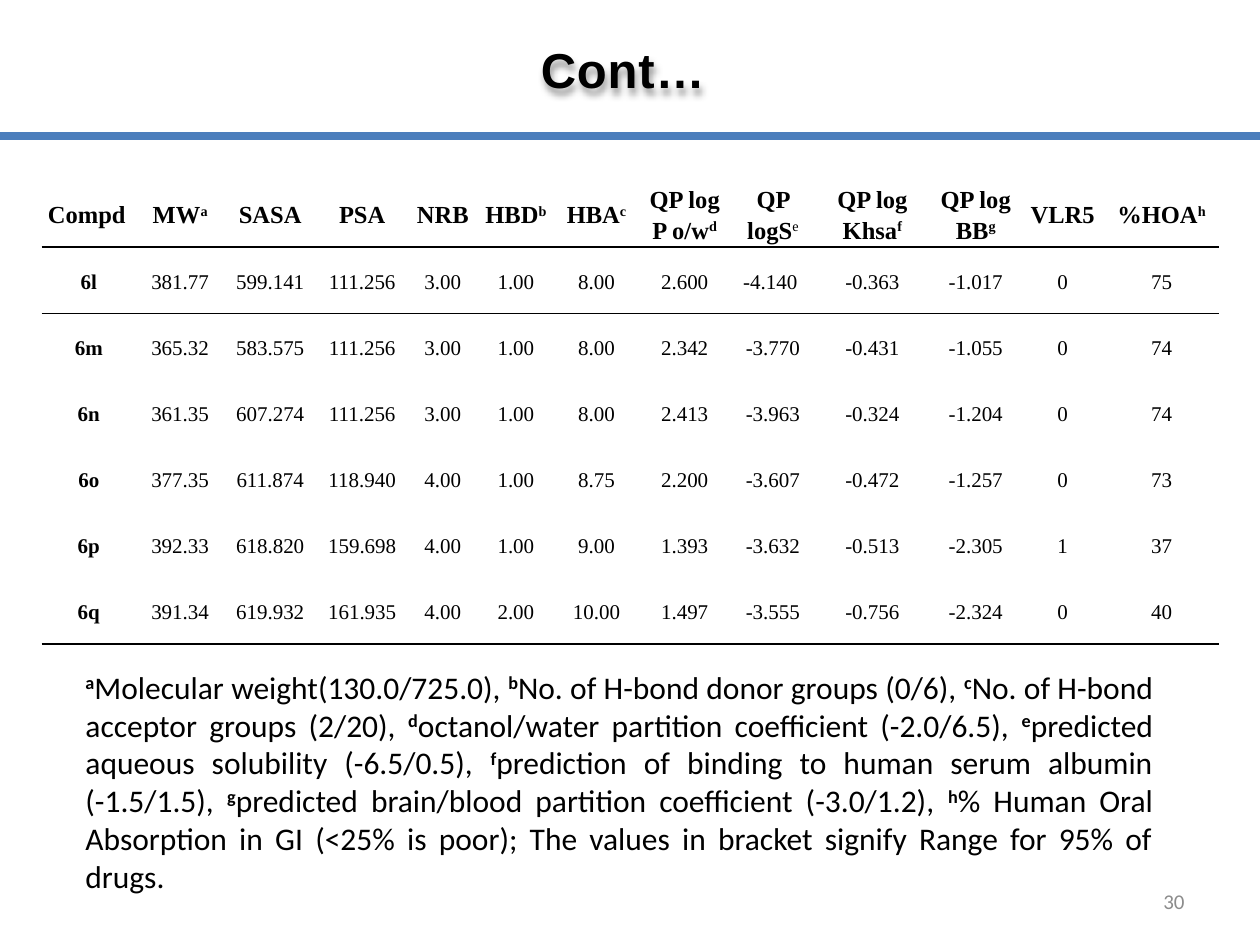
"""Build the slide with the table of predicted properties for compounds 6l to 6q."""
from lxml.etree import SubElement
from pptx import Presentation
from pptx.dml.color import RGBColor
from pptx.enum.shapes import MSO_CONNECTOR
from pptx.enum.text import MSO_ANCHOR, MSO_AUTO_SIZE, PP_ALIGN
from pptx.oxml import parse_xml
from pptx.oxml.ns import nsdecls, qn
from pptx.util import Inches, Pt

BLACK = RGBColor(0, 0, 0)
THEME = {
    "rule": RGBColor(0x4B, 0x7E, 0xBC),
    "title": {"name": "Arial", "size": Pt(28), "bold": True, "color": BLACK},
    "head": {"name": "Times New Roman", "size": Pt(14), "bold": True, "color": BLACK},
    "cell": {"name": "Times New Roman", "size": Pt(12), "bold": False, "color": BLACK},
    "note": {"name": "Calibri", "size": Pt(18), "bold": False, "color": BLACK},
    "number": {"name": "Calibri", "size": Pt(12), "bold": False,
               "color": RGBColor(0x8C, 0x8C, 0x8C)},
}
NO_STYLE = "{2D5ABB26-0587-4C30-8999-92F81FD0307C}"


def add_run(p, text, style, raised=False, **changes):
    r = p.add_run()
    r.text = text
    for key, value in {**THEME[style], **changes}.items():
        if key == "color":
            r.font.color.rgb = value
        else:
            setattr(r.font, key, value)
    if raised:
        r._r.get_or_add_rPr().set("baseline", "30000")
    return r


def add_border(cell, side):
    ln = SubElement(cell._tc.get_or_add_tcPr(), qn(f"a:{side}"), w=str(Pt(1)))
    fill = SubElement(ln, qn("a:solidFill"))
    SubElement(fill, qn("a:srgbClr"), val=str(BLACK))


prs = Presentation()
prs.slide_width, prs.slide_height = Inches(10), Inches(7.5)
W, H = prs.slide_width, prs.slide_height
s = prs.slides.add_slide(prs.slide_layouts[5])

rule_y = int(H * 0.144)
rule = s.shapes.add_connector(MSO_CONNECTOR.STRAIGHT, 0, rule_y, W, rule_y)
rule.line.color.rgb = THEME["rule"]
rule.line.width = Pt(4.5)
SubElement(rule._element.spPr, qn("a:effectLst"))

title = s.shapes.title
title.left, title.top, title.width, title.height = 0, int(H * 0.035), W, int(H * 0.076)
tf = title.text_frame
tf.auto_size = MSO_AUTO_SIZE.SHAPE_TO_FIT_TEXT
tf.vertical_anchor = MSO_ANCHOR.TOP
p = tf.paragraphs[0]
p.alignment = PP_ALIGN.CENTER
r = add_run(p, "Cont… ", "title")
rPr = r._r.get_or_add_rPr()
rPr.set("spc", "50")
rPr.insert(0, parse_xml(
    f'<a:ln {nsdecls("a")} w="13500"><a:solidFill><a:srgbClr val="101A26">'
    '<a:alpha val="6000"/></a:srgbClr></a:solidFill></a:ln>'))
title._element.spPr.append(parse_xml(
    f'<a:effectLst {nsdecls("a")}><a:outerShdw blurRad="50800" dist="39000" dir="4200000">'
    '<a:srgbClr val="000000"><a:alpha val="40000"/></a:srgbClr></a:outerShdw></a:effectLst>'))

heads = [("Compd", ""), ("MW", "a"), ("SASA", ""), ("PSA", ""), ("NRB", ""), ("HBD", "b"),
         ("HBA", "c"), ("QP log P o/w", "d"), ("QP logS", "e"), ("QP log Khsa", "f"),
         ("QP log BB", "g"), ("VLR5", ""), ("%HOA", "h")]
compounds = [
    ["6l", "381.77", "599.141", "111.256", "3.00", "1.00", "8.00",
     "2.600", "-4.140 ", "-0.363", "-1.017", "0", "75"],
    ["6m", "365.32", "583.575", "111.256", "3.00", "1.00", "8.00",
     "2.342", "-3.770", "-0.431", "-1.055", "0", "74"],
    ["6n", "361.35", "607.274", "111.256", "3.00", "1.00", "8.00",
     "2.413", "-3.963", "-0.324", "-1.204", "0", "74"],
    ["6o", "377.35", "611.874", "118.940", "4.00", "1.00", "8.75",
     "2.200", "-3.607", "-0.472", "-1.257", "0", "73"],
    ["6p", "392.33", "618.820", "159.698", "4.00", "1.00", "9.00",
     "1.393", "-3.632", "-0.513", "-2.305", "1", "37"],
    ["6q", "391.34", "619.932", "161.935", "4.00", "2.00", "10.00",
     "1.497", "-3.555", "-0.756", "-2.324", "0", "40"],
]
rows = [heads] + [[(value, "") for value in row] for row in compounds]
col_widths = [0.75, 0.7, 0.73, 0.73, 0.55, 0.61, 0.67, 0.73, 0.67, 0.91, 0.73, 0.65, 0.92]
borders = {0: ["lnB"], 1: ["lnT"], len(rows) - 1: ["lnB"]}
row_height = int(H * 0.07)

frame = s.shapes.add_table(len(rows), len(heads), int(W * 0.033), int(H * 0.19),
                           int(W * 0.933), row_height * len(rows))
table = frame.table
table.first_row = table.horz_banding = False
table._tbl.tblPr.find(qn("a:tableStyleId")).text = NO_STYLE
for col, width in zip(table.columns, col_widths):
    col.width = Inches(width)
for i, row in enumerate(rows):
    table.rows[i].height = row_height
    style = "cell" if i else "head"
    for j, (text, mark) in enumerate(row):
        cell = table.cell(i, j)
        cell.vertical_anchor = MSO_ANCHOR.MIDDLE
        cell.margin_left = cell.margin_right = Inches(0.07 if i else 0.05)
        cell.margin_top = cell.margin_bottom = 0
        for side in borders.get(i, []):
            add_border(cell, side)
        cell.fill.background()
        p = cell.text_frame.paragraphs[0]
        p.alignment = PP_ALIGN.CENTER if i or j else PP_ALIGN.LEFT
        p.line_spacing = 1.15
        p.space_before = Pt(6)
        p.space_after = Pt(10 if i else 0)
        add_run(p, text, style, bold=i == 0 or j == 0)
        if mark:
            add_run(p, mark, style, raised=True, bold=mark != "e")

notes = {
    "a": "Molecular weight(130.0/725.0), ",
    "b": "No. of H-bond donor groups (0/6), ",
    "c": "No. of H-bond acceptor groups (2/20), ",
    "d": "octanol/water partition coefficient (-2.0/6.5), ",
    "e": "predicted aqueous solubility (-6.5/0.5), ",
    "f": "prediction of binding to human serum albumin (-1.5/1.5), ",
    "g": "predicted brain/blood partition coefficient (-3.0/1.2), ",
    "h": "% Human Oral Absorption in GI (<25% is poor); "
         "The values in bracket signify Range for 95% of drugs.",
}
sp = s.shapes.add_textbox(int(W * 0.058), int(H * 0.7), int(W * 0.867), int(H * 0.256))
tf = sp.text_frame
tf.word_wrap = True
tf.auto_size = MSO_AUTO_SIZE.SHAPE_TO_FIT_TEXT
p = tf.paragraphs[0]
p.alignment = PP_ALIGN.JUSTIFY
for mark, text in notes.items():
    add_run(p, mark, "note", raised=True, bold=True)
    add_run(p, text, "note")

sp = s.shapes.add_textbox(int(W * 0.717), int(H * 0.927), int(W * 0.233), int(H * 0.053))
tf = sp.text_frame
tf.word_wrap = True
tf.vertical_anchor = MSO_ANCHOR.MIDDLE
p = tf.paragraphs[0]
p.alignment = PP_ALIGN.RIGHT
add_run(p, "30", "number")

prs.save("out.pptx")
